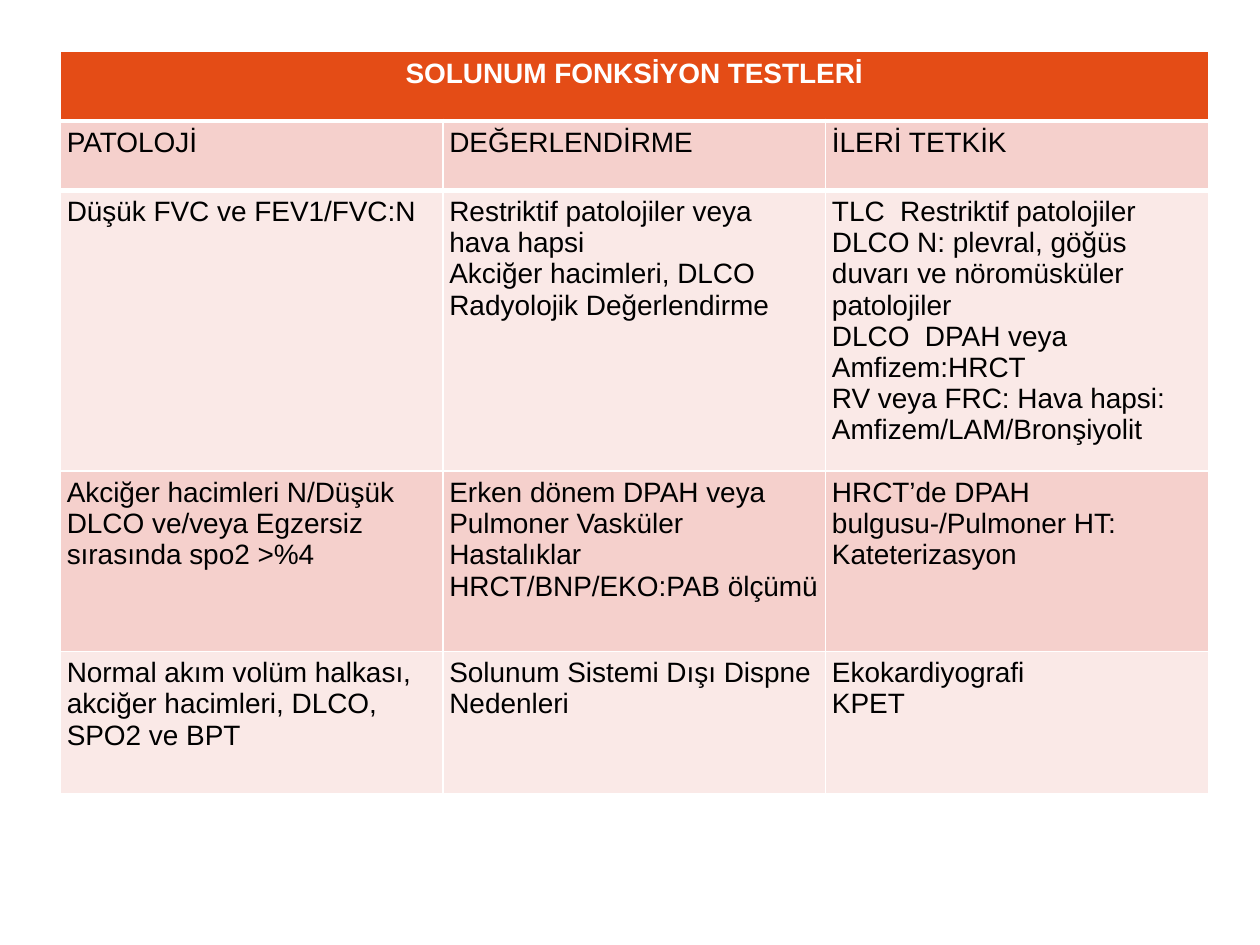
"""Builds a slide with a table of pulmonary function tests."""
from lxml import etree
from pptx import Presentation
from pptx.dml.color import RGBColor
from pptx.enum import text
from pptx.oxml import ns
from pptx.util import Inches, Pt


def color(value):
    return RGBColor.from_string(value)


def add_border(cell, side, points):
    line = etree.SubElement(cell._tc.get_or_add_tcPr(), ns.qn(f"a:ln{side}"), w=str(Pt(points)))
    fill = etree.SubElement(line, ns.qn("a:solidFill"))
    etree.SubElement(fill, ns.qn("a:srgbClr"), val="FFFFFF")


rows = [
    (0.55, "E44C16", ["SOLUNUM FONKSİYON TESTLERİ", "", ""]),
    (0.55, "F5D0CC", ["PATOLOJİ", "DEĞERLENDİRME", "İLERİ TETKİK"]),
    (2.23, "FAE9E7", [
        "Düşük FVC ve FEV1/FVC:N",
        "Restriktif patolojiler veya hava hapsi\n"
        "Akciğer hacimleri, DLCO\n"
        "Radyolojik Değerlendirme",
        "TLC  Restriktif patolojiler\n"
        "DLCO N: plevral, göğüs duvarı ve nöromüsküler patolojiler\n"
        "DLCO  DPAH veya Amfizem:HRCT\n"
        "RV veya FRC: Hava hapsi: Amfizem/LAM/Bronşiyolit",
    ]),
    (1.43, "F5D0CC", [
        "Akciğer hacimleri N/Düşük DLCO ve/veya Egzersiz sırasında spo2 >%4",
        "Erken dönem DPAH veya Pulmoner Vasküler Hastalıklar\n"
        "HRCT/BNP/EKO:PAB ölçümü",
        "HRCT’de DPAH bulgusu-/Pulmoner HT: Kateterizasyon",
    ]),
    (1.13, "FAE9E7", [
        "Normal akım volüm halkası, akciğer hacimleri, DLCO, SPO2 ve BPT",
        "Solunum Sistemi Dışı Dispne Nedenleri",
        "Ekokardiyografi\nKPET",
    ]),
]

prs = Presentation()
prs.slide_width, prs.slide_height = Inches(10), Inches(7.5)
slide = prs.slides.add_slide(prs.slide_layouts[6])
tests = slide.shapes.add_table(
    len(rows), 3, Inches(0.48), Inches(0.41), Inches(9.11), Inches(5.89)).table
for column in tests.columns:
    column.width = Inches(9.11 / 3)

for r, (height, background, entries) in enumerate(rows):
    tests.rows[r].height = Inches(height)
    for c, entry in enumerate(entries):
        cell = tests.cell(r, c)
        cell.margin_left = cell.margin_right = Inches(0.05)
        cell.margin_top = cell.margin_bottom = Inches(0.05)
        widths = {"L": 1, "R": 1, "T": 3 if r in (1, 2) else 1, "B": 3 if r in (0, 1) else 1}
        for side, points in widths.items():
            add_border(cell, side, points)
        cell.fill.solid()
        cell.fill.fore_color.rgb = color(background)
        cell.text = entry
        for paragraph in cell.text_frame.paragraphs:
            paragraph.alignment = text.PP_ALIGN.CENTER if r == 0 else text.PP_ALIGN.LEFT
            paragraph.font.name = "Arial"
            paragraph.font.size = Pt(16)
            paragraph.font.bold = r == 0
            paragraph.font.color.rgb = color("FFFFFF" if r == 0 else "000000")
tests.cell(0, 0).merge(tests.cell(0, 2))

prs.save("out.pptx")
